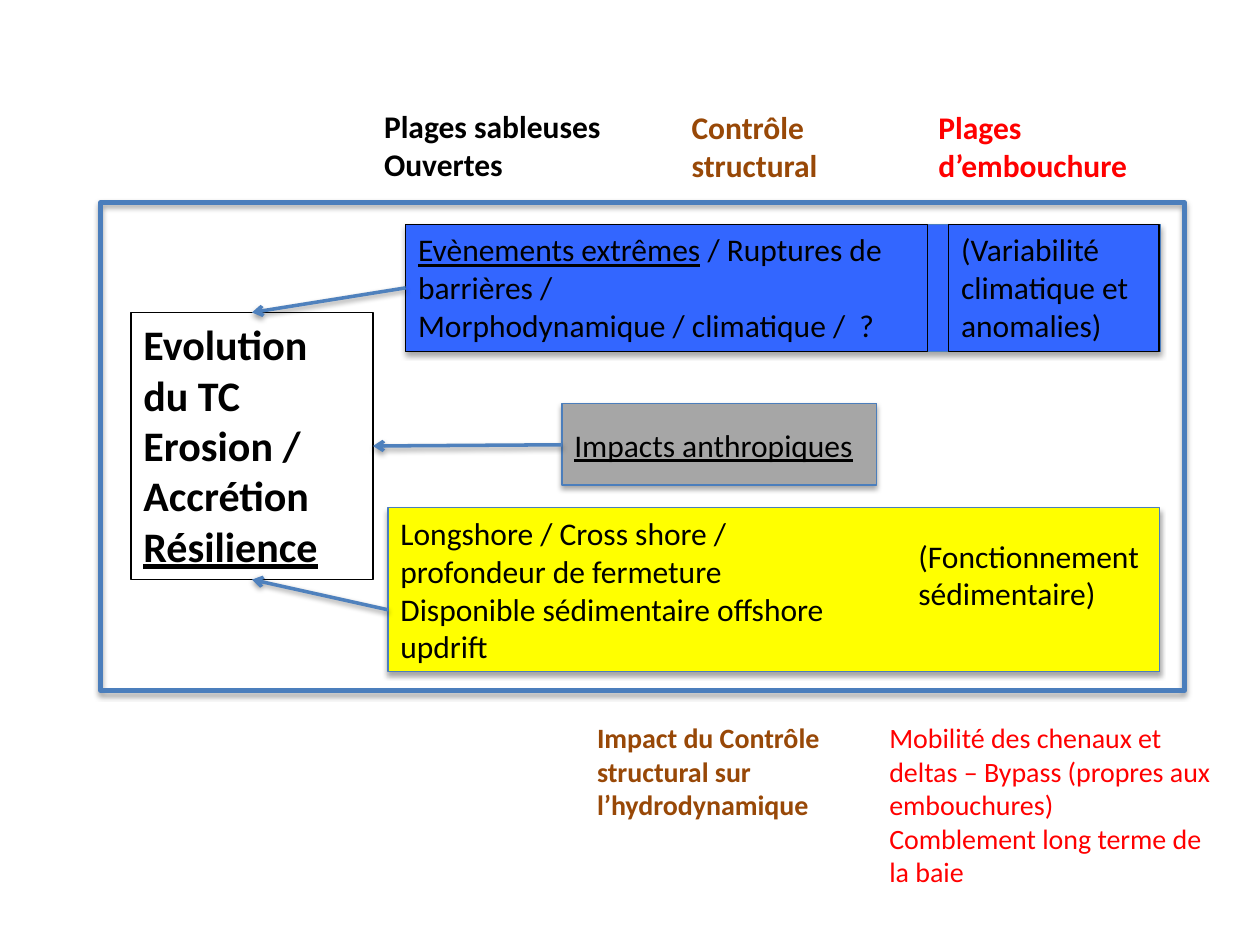
from pptx import Presentation
from pptx.dml.color import RGBColor
from pptx.enum import shapes, text
from pptx.oxml import parse_xml
from pptx.oxml import ns
from pptx.util import Inches, Pt

HUES = {
    "black": "000000", "red": "FF0000", "brown": "984807",
    "blue": "3366FF", "grey": "A6A6A6", "yellow": "FFFF00",
    "edge": "4B7EBC", "arrow": "4F81BD",
}


def hue(name):
    """Return the named colour."""
    return RGBColor.from_string(HUES[name])


def panel(slide, place, fill=None, width=0.75):
    """Add a rectangle that keeps the theme's soft shadow."""
    box = slide.shapes.add_shape(
        shapes.MSO_SHAPE.RECTANGLE, *map(Inches, place))
    if fill:
        box.fill.solid()
        box.fill.fore_color.rgb = hue(fill)
    else:
        box.fill.background()
    box.line.color.rgb = hue("edge")
    box.line.width = Pt(width)
    return box


def label(slide, place, lines, size=18, color="black", bold=False,
          under=(), edge=False, wrap=True):
    """Add a text box; each line is a list of runs, some underlined."""
    box = slide.shapes.add_textbox(*map(Inches, place))
    if edge:
        box.line.color.rgb = hue("black")
        box.line.width = Pt(0.75)
    frame = box.text_frame
    frame.word_wrap = wrap
    frame.auto_size = text.MSO_AUTO_SIZE.NONE
    for row, runs in enumerate(lines):
        para = frame.paragraphs[0] if row == 0 else frame.add_paragraph()
        for words in runs:
            run = para.add_run()
            run.text = words
            font = run.font
            font.name = "Calibri"
            font.size = Pt(size)
            font.bold = bold
            font.underline = words in under
            font.color.rgb = hue(color)
    return box


def arrow(slide, start, end, side):
    """Join the left side of one box to a side of another with an arrow."""
    link = slide.shapes.add_connector(
        shapes.MSO_CONNECTOR.STRAIGHT, 0, 0, 0, 0)
    link.begin_connect(start, 1)
    link.end_connect(end, side)
    link.line.color.rgb = hue("arrow")
    link.line.width = Pt(2)
    link.line._get_or_add_ln().append(
        parse_xml(f'<a:tailEnd {ns.nsdecls("a")} type="arrow"/>'))


def heads(slide):
    """Add the three column headings."""
    label(slide, (2.95, 0.8, 2.03, 0.71),
          [["Plages sableuses"], ["Ouvertes"]], bold=True)
    label(slide, (5.39, 0.81, 1.25, 0.71), [["Contrôle structural"]],
          color="brown", bold=True)
    label(slide, (7.35, 0.81, 1.86, 0.71), [["Plages d’embouchure"]],
          color="red", bold=True)


def notes(slide):
    """Add the two remarks below the frame."""
    label(slide, (4.64, 5.67, 2, 0.91),
          [["Impact du Contrôle structural sur l’hydrodynamique"]],
          size=16, color="brown", bold=True)
    label(slide, (6.96, 5.67, 2.78, 1.45),
          [["Mobilité des chenaux et deltas – Bypass "
            "(propres aux embouchures)"],
           ["Comblement long terme de la baie"]], size=16, color="red")


def model(slide):
    """Add the frame, the coloured factors and their links to evolution."""
    panel(slide, (3.22, 1.78, 5.99, 1.01), "blue")
    panel(slide, (4.46, 3.2, 2.5, 0.65), "grey")
    panel(slide, (3.08, 4.03, 6.12, 1.3), "yellow")
    panel(slide, (0.8, 1.61, 8.6, 3.87), width=3)
    core = label(slide, (1.04, 2.48, 1.92, 2.12),
                 [["Evolution du TC"], ["Erosion / Accrétion"],
                  ["Résilience"]],
                 size=24, bold=True, under=["Résilience"], edge=True)
    events = label(slide, (3.22, 1.78, 4.14, 1.01),
                   [["Evènements extrêmes", " / Ruptures de barrières /"],
                    ["Morphodynamique / climatique /  ?"]],
                   under=["Evènements extrêmes"], edge=True)
    label(slide, (7.53, 1.78, 1.67, 1.01),
          [["(Variabilité climatique et anomalies)"]], edge=True)
    human = label(slide, (4.46, 3.33, 2.45, 0.4),
                  [["Impacts anthropiques"]],
                  under=["Impacts anthropiques"], wrap=False)
    drift = label(slide, (3.08, 4.03, 3.67, 1.62),
                  [["Longshore / Cross shore / profondeur de fermeture "
                    "Disponible sédimentaire offshore updrift"]])
    label(slide, (7.19, 4.21, 2.31, 0.71),
          [["(Fonctionnement sédimentaire)"]])
    for start, side in ((events, 0), (human, 3), (drift, 2)):
        arrow(slide, start, core, side)


def main():
    """Build and save the slide."""
    deck = Presentation()
    deck.slide_width, deck.slide_height = Inches(10), Inches(7.5)
    slide = deck.slides.add_slide(deck.slide_layouts[6])
    heads(slide)
    model(slide)
    notes(slide)
    deck.save("out.pptx")


if __name__ == "__main__":
    main()
